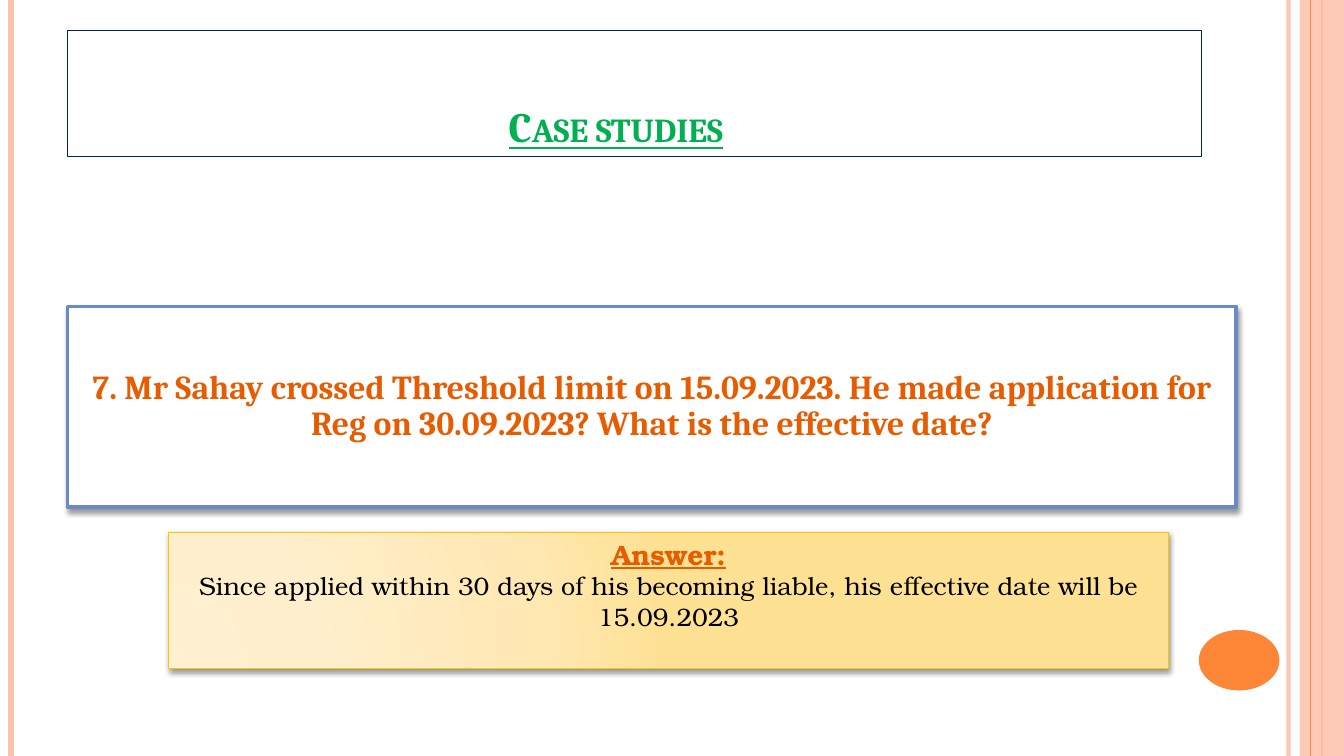
import dataclasses
import typing

import lxml.etree
import pptx
import pptx.dml.color
import pptx.enum.shapes
import pptx.enum.text
import pptx.oxml
import pptx.oxml.ns
import pptx.util

PX = 9144  # 100 px to the inch
WIDTH, HEIGHT = 1333, 750
ORANGE, PEACH, RUST = "FE8637", "FEC3AE", "E75C01"
SERIF, BOOK = "Cambria", "TeX Gyre Bonum"
ANCHOR = pptx.enum.text.MSO_ANCHOR
SHAPE = pptx.enum.shapes.MSO_SHAPE


@dataclasses.dataclass
class Rule:
    x: int
    color: str
    weight: float
    opacity: int = 100


@dataclasses.dataclass
class Box:
    x: int
    y: int
    w: int
    h: int
    fill: typing.Optional[str] = None
    line: typing.Optional[str] = None
    weight: float = 1
    opacity: int = 100
    shadow: bool = False
    kind: typing.Any = SHAPE.RECTANGLE


RULES = [
    Rule(1278, PEACH, 3, 93),
    Rule(11, PEACH, 4.5),
    Rule(1311, ORANGE, 1.5),
]
BAND = Box(1289, 0, 44, HEIGHT, fill=PEACH, opacity=87)
BAND_EDGE = Rule(1300, ORANGE, 0.75)
DISC = Box(1189, 625, 80, 60, fill=ORANGE, kind=SHAPE.OVAL)
TITLE = Box(67, 30, 1125, 125, line="002060", weight=0.75)
QUESTION = Box(67, 304, 1159, 199, fill="FFFFFF", line="6A8AC5", weight=2.75, shadow=True)
ANSWER = Box(167, 528, 992, 135, line="F8C700", shadow=True)
ANSWER_STOPS = [(0, "FFF0D1"), (30, "FFEFCC"), (75, "FFE7B1"), (100, "FFE193")]


def rgb(value: str) -> pptx.dml.color.RGBColor:
    return pptx.dml.color.RGBColor.from_string(value)


def sub(parent, tag: str, **attrs):
    return lxml.etree.SubElement(
        parent, pptx.oxml.ns.qn(tag), {k: str(v) for k, v in attrs.items()})


def set_opacity(sp, percent: int) -> None:
    if percent < 100:
        for color in sp._element.spPr.iter(pptx.oxml.ns.qn("a:srgbClr")):
            sub(color, "a:alpha", val=percent * 1000)


def add_rule(slide, rule: Rule):
    """Draw a vertical line over the full slide height."""
    line = slide.shapes.add_connector(
        pptx.enum.shapes.MSO_CONNECTOR.STRAIGHT,
        rule.x * PX, 0, rule.x * PX, HEIGHT * PX)
    line.line.color.rgb = rgb(rule.color)
    line.line.width = pptx.util.Pt(rule.weight)
    set_opacity(line, rule.opacity)
    sub(line._element.spPr, "a:effectLst")
    return line


def add_box(slide, box: Box):
    sp = slide.shapes.add_shape(
        box.kind, box.x * PX, box.y * PX, box.w * PX, box.h * PX)
    if box.fill:
        sp.fill.solid()
        sp.fill.fore_color.rgb = rgb(box.fill)
    else:
        sp.fill.background()
    if box.line:
        sp.line.color.rgb = rgb(box.line)
        sp.line.width = pptx.util.Pt(box.weight)
    else:
        sp.line.fill.background()
    set_opacity(sp, box.opacity)
    sp.shadow.inherit = False
    if box.shadow:
        effects = sp._element.spPr.find(pptx.oxml.ns.qn("a:effectLst"))
        outer = sub(effects, "a:outerShdw", blurRad=pptx.util.Pt(4),
                    dist=pptx.util.Pt(2), dir=90 * 60000, rotWithShape=0)
        sub(sub(outer, "a:srgbClr", val="000000"), "a:alpha", val=40000)
    return sp


def set_radial_fill(sp, stops) -> None:
    spPr = sp._element.spPr
    grad = pptx.oxml.parse_xml(
        f'<a:gradFill {pptx.oxml.ns.nsdecls("a")} rotWithShape="1"/>')
    stop_list = sub(grad, "a:gsLst")
    for position, color in stops:
        sub(sub(stop_list, "a:gs", pos=position * 1000), "a:srgbClr", val=color)
    sub(sub(grad, "a:path", path="circle"), "a:fillToRect",
        l=5000, t=100000, r=120000, b=10000)
    spPr.replace(spPr.find(pptx.oxml.ns.qn("a:noFill")), grad)


def set_frame(sp, anchor, inset: typing.Optional[int] = None):
    tf = sp.text_frame
    tf.word_wrap = True
    tf.vertical_anchor = anchor
    if inset is not None:
        tf.margin_left = tf.margin_right = inset * PX
        tf.margin_top = tf.margin_bottom = inset * PX
    return tf


def add_text(p, text: str, *, size: float, font: str, color: str, bold: bool = False,
             underline: bool = False, small_caps: bool = False) -> None:
    p.alignment = pptx.enum.text.PP_ALIGN.CENTER
    r = p.add_run()
    r.text = text
    r.font.size = pptx.util.Pt(size)
    r.font.name = font
    r.font.color.rgb = rgb(color)
    r.font.bold = bold
    r.font.underline = underline
    if small_caps:
        r.font._element.set("cap", "small")


def main() -> None:
    prs = pptx.Presentation()
    prs.slide_width, prs.slide_height = WIDTH * PX, HEIGHT * PX
    slide = prs.slides.add_slide(prs.slide_layouts[6])

    lines = [add_rule(slide, rule) for rule in RULES]
    band = add_box(slide, BAND)
    lines[-1].begin_connect(band, 0)
    lines[-1].end_connect(band, 2)
    add_rule(slide, BAND_EDGE)
    add_box(slide, DISC)

    p = set_frame(add_box(slide, TITLE), ANCHOR.BOTTOM).paragraphs[0]
    for text, underline in (("Case studies", True), ("\t", False)):
        add_text(p, text, size=30, font=SERIF, color="00B050", bold=True,
                 underline=underline, small_caps=True)

    p = set_frame(add_box(slide, QUESTION), ANCHOR.MIDDLE, inset=2).paragraphs[0]
    p.line_spacing = 0.9
    add_text(p, "7. Mr Sahay crossed Threshold limit on 15.09.2023. He made application "
             "for Reg on 30.09.2023? What is the effective date?",
             size=24, font=SERIF, color=RUST, bold=True)

    answer = add_box(slide, ANSWER)
    set_radial_fill(answer, ANSWER_STOPS)
    tf = set_frame(answer, ANCHOR.TOP)
    add_text(tf.paragraphs[0], "Answer:", size=20, font=BOOK, color=RUST,
             bold=True, underline=True)
    add_text(tf.add_paragraph(), "Since applied within 30 days of his becoming liable, "
             "his effective date will be 15.09.2023", size=18, font=BOOK, color="000000")

    prs.save("out.pptx")


if __name__ == "__main__":
    main()
